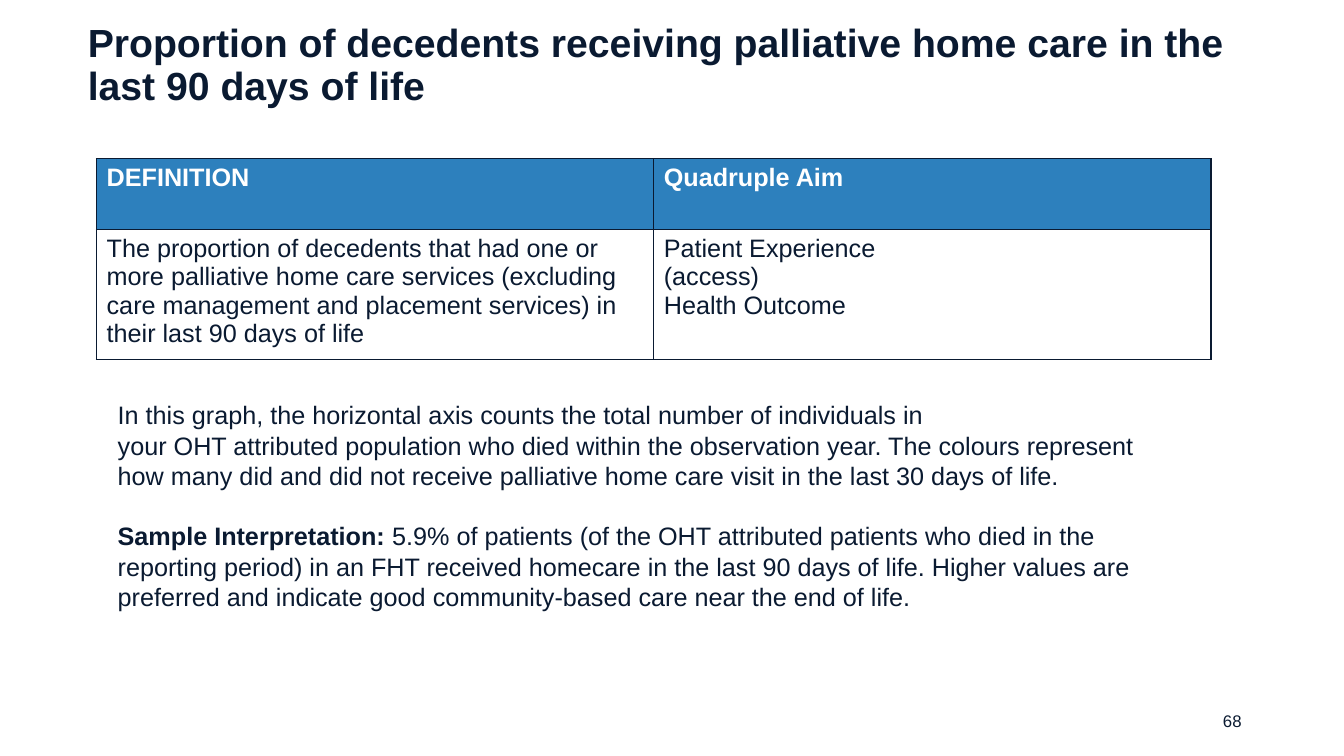
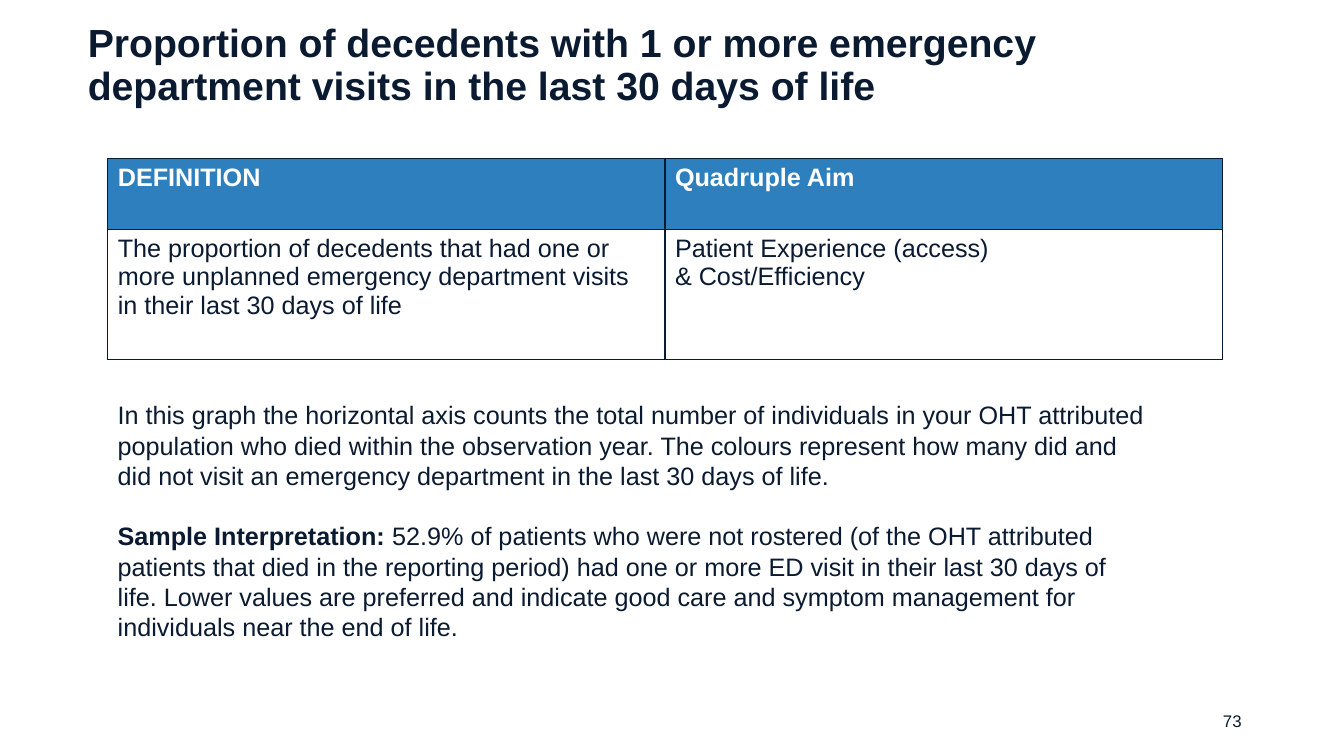
from lxml.etree import SubElement
from pptx import Presentation
from pptx.dml.color import RGBColor
from pptx.enum.text import MSO_ANCHOR, MSO_AUTO_SIZE, PP_ALIGN
from pptx.oxml.ns import qn
from pptx.util import Pt

COLORS = {"ink": "0A1A31", "header": "2D80BD", "white": "FFFFFF"}
FONT = "Arial"
LEAD_IN = "Sample Interpretation: "
HEADINGS = ["DEFINITION", "Quadruple Aim"]

SLIDES = [
    {
        "number": "68",
        "title": "Proportion of decedents receiving palliative home care in the last 90 days of life",
        "table_left": 69,
        "cells": [
            "The proportion of decedents that had one or more palliative home care services "
            "(excluding care management and placement services) in their last 90 days of life",
            "Patient Experience\v(access)\nHealth Outcome",
        ],
        "body_width": 743,
        "graph": "In this graph, the horizontal axis counts the total number of individuals in\v"
                 "your OHT attributed population who died within the observation year. The colours "
                 "represent how many did and did not receive palliative home care visit in the "
                 "last 30 days of life.",
        "sample": "5.9% of patients (of the OHT attributed patients who died in the reporting "
                  "period) in an FHT received homecare in the last 90 days of life. Higher values "
                  "are preferred and indicate good community-based care near the end of life.",
    },
    {
        "number": "73",
        "title": "Proportion of decedents with 1 or more emergency department visits in the last 30 days of life",
        "table_left": 77,
        "cells": [
            "The proportion of decedents that had one or more unplanned emergency department "
            "visits in their last 30 days of life",
            "Patient Experience (access)\n& Cost/Efficiency",
        ],
        "body_width": 751,
        "graph": "In this graph the horizontal axis counts the total number of individuals in your "
                 "OHT attributed population who died within the observation year. The colours "
                 "represent how many did and did not visit an emergency department in the last "
                 "30 days of life.",
        "sample": "52.9% of patients who were not rostered (of the OHT attributed patients that "
                  "died in the reporting period) had one or more ED visit in their last 30 days "
                  "of life. Lower values are preferred and indicate good care and symptom "
                  "management for individuals near the end of life.",
    },
]


def format_text(frame, size, color="ink", bold=False, spacing=1.0, align=PP_ALIGN.LEFT):
    frame.word_wrap = True
    for para in frame.paragraphs:
        para.alignment = align
        para.line_spacing = spacing
        for span in para.runs:
            span.font.name = FONT
            span.font.size = Pt(size)
            span.font.bold = bold
            span.font.color.rgb = RGBColor.from_string(COLORS[color])


def format_cell(cell, fill):
    cell.fill.solid()
    cell.fill.fore_color.rgb = RGBColor.from_string(COLORS[fill])
    properties = cell._tc.get_or_add_tcPr()
    for position, side in enumerate(("a:lnL", "a:lnR", "a:lnT", "a:lnB")):
        line = SubElement(properties, qn(side), w=str(Pt(1)))
        solid = SubElement(line, qn("a:solidFill"))
        SubElement(solid, qn("a:srgbClr"), val=COLORS["ink"])
        # Borders come before the fill in the cell properties
        properties.insert(position, line)


deck = Presentation()
deck.slide_width, deck.slide_height = Pt(960), Pt(540)

for content in SLIDES:
    page = deck.slides.add_slide(deck.slide_layouts[5])

    # Title
    title = page.shapes.title
    title.left, title.top, title.width, title.height = Pt(55.5), Pt(17), Pt(850), Pt(60.5)
    title.text_frame.text = content["title"]
    title.text_frame.auto_size = MSO_AUTO_SIZE.NONE
    title.text_frame.vertical_anchor = MSO_ANCHOR.MIDDLE
    format_text(title.text_frame, 28, bold=True, spacing=0.9)

    # Definition table
    frame = page.shapes.add_table(2, 2, Pt(content["table_left"]), Pt(113.5), Pt(796), Pt(143.5))
    table = frame.table
    table.first_row = table.horz_banding = False
    table.rows[0].height, table.rows[1].height = Pt(50.5), Pt(93)
    for column in range(2):
        heading, detail = table.cell(0, column), table.cell(1, column)
        heading.text_frame.text = HEADINGS[column]
        detail.text_frame.text = content["cells"][column]
        format_text(heading.text_frame, 18, "white", bold=True, spacing=Pt(20.25))
        format_text(detail.text_frame, 18, spacing=Pt(20.25))
        format_cell(heading, "header")
        format_cell(detail, "white")

    # Explanation of the graph and sample interpretation
    box = page.shapes.add_textbox(Pt(77), Pt(282), Pt(content["body_width"]), Pt(160))
    graph = box.text_frame.paragraphs[0]
    graph.text = content["graph"]
    sample = box.text_frame.add_paragraph()
    sample.text = LEAD_IN
    sample.add_run().text = content["sample"]
    format_text(box.text_frame, 18, spacing=Pt(21.6))
    sample.space_before = Pt(21.6)
    sample.runs[0].font.bold = True

    # Page number
    number = page.shapes.add_textbox(Pt(678), Pt(500.5), Pt(216), Pt(29))
    number.text_frame.text = content["number"]
    number.text_frame.vertical_anchor = MSO_ANCHOR.MIDDLE
    format_text(number.text_frame, 12, align=PP_ALIGN.RIGHT)

deck.save("out.pptx")
